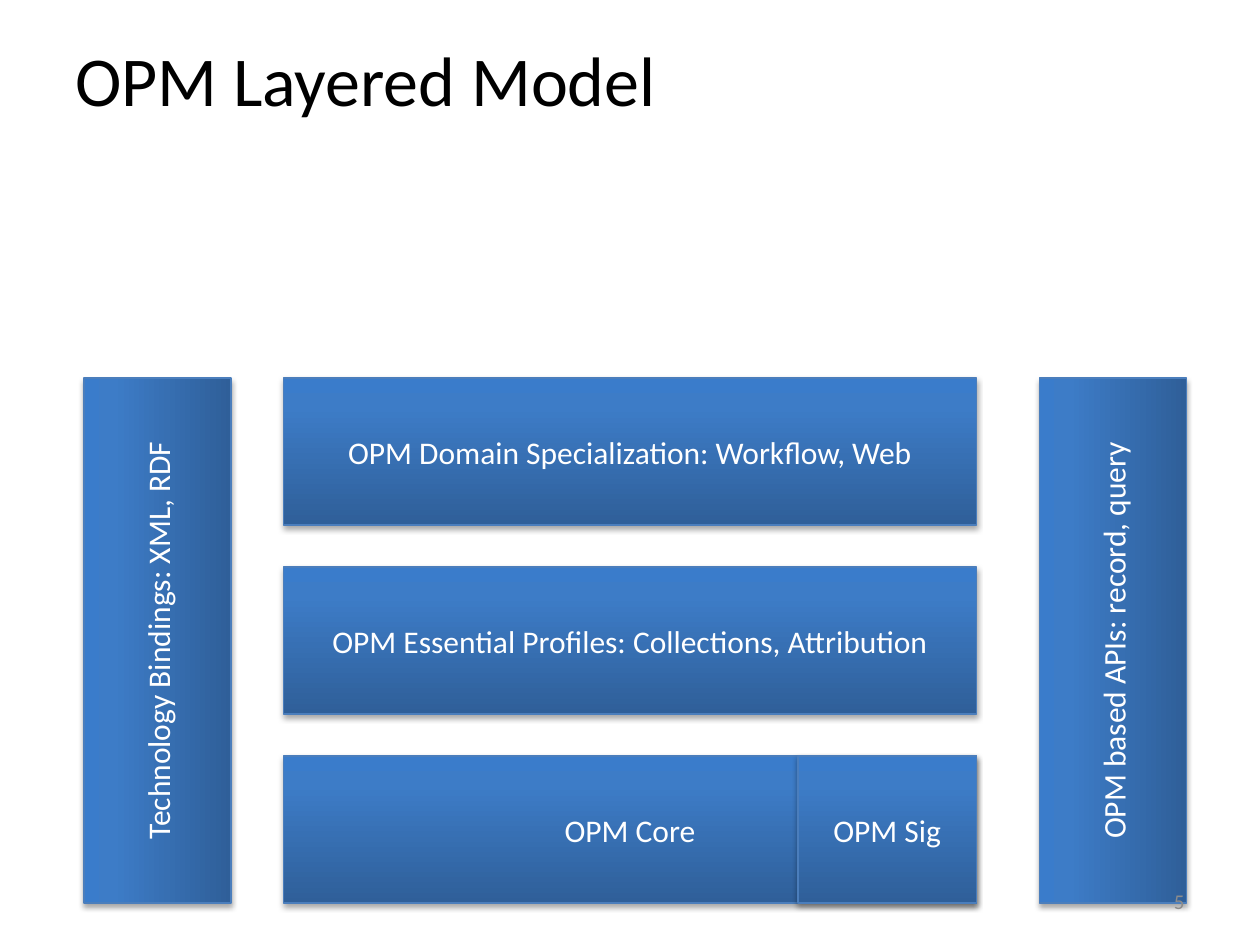
import copy
from typing import NamedTuple

import pptx
import pptx.dml.color
import pptx.enum.shapes
import pptx.enum.text
import pptx.oxml
import pptx.oxml.ns
import pptx.util

Pt = pptx.util.Pt
RGBColor = pptx.dml.color.RGBColor
ALIGN = pptx.enum.text.PP_ALIGN
MIDDLE = pptx.enum.text.MSO_ANCHOR.MIDDLE
RECT = pptx.enum.shapes.MSO_SHAPE.RECTANGLE

FONT = "Calibri"
BLACK = RGBColor(0x00, 0x00, 0x00)
WHITE = RGBColor(0xFF, 0xFF, 0xFF)
GRAY = RGBColor(0x8C, 0x8C, 0x8C)
EDGE = RGBColor(0x4B, 0x7E, 0xBC)
BLUES = (
    (0, RGBColor(0x2F, 0x5F, 0x99)),
    (0.8, RGBColor(0x3D, 0x7C, 0xC7)),
    (1, RGBColor(0x3A, 0x7C, 0xCB)),
)

# Layer grid, in points
LEFT, TOP, WIDE, HIGH, STEP = 162, 216, 396, 84, 108
SIDE = 300  # length of a side bar before it is turned
SIG = 102  # width of the signature box

SHADOW = (
    f'<a:outerShdw {pptx.oxml.ns.nsdecls("a")} blurRad="{Pt(3.15)}" dist="{Pt(1.8)}"'
    ' dir="5400000" rotWithShape="0">'
    '<a:srgbClr val="000000"><a:alpha val="35000"/></a:srgbClr></a:outerShdw>'
)


class Box(NamedTuple):
    text: str
    x: float
    row: int
    width: float = WIDE
    turn: float = 0


class Label(NamedTuple):
    text: str
    x: float
    y: float
    width: float
    height: float
    size: float
    color: RGBColor
    align: ALIGN


BOXES = (
    Box("OPM Core", LEFT, 2),
    Box("OPM Essential Profiles: Collections, Attribution", LEFT, 1),
    Box("OPM Domain Specialization: Workflow, Web", LEFT, 0),
    Box("Technology Bindings: XML, RDF", -60, 1, SIDE, 270),
    Box("OPM Sig", LEFT + WIDE - SIG, 2, SIG),
    Box("OPM based APIs: record, query", 486, 1, SIDE, 270),
)

LABELS = (
    Label("OPM Layered Model", 36, 0, 534, 90, 40, BLACK, ALIGN.LEFT),
    Label("5", 516, 500.5, 168, 28.8, 12, GRAY, ALIGN.RIGHT),
)


def write(shape, text: str, size: float, color: RGBColor, align: ALIGN) -> None:
    frame = shape.text_frame
    frame.word_wrap = True
    frame.vertical_anchor = MIDDLE
    frame.text = text
    line = frame.paragraphs[0]
    line.alignment = align
    font = line.runs[0].font
    font.name, font.size, font.color.rgb = FONT, Pt(size), color


def shade(fill) -> None:
    fill.gradient()
    fill.gradient_angle = 90
    # A new gradient has two stops; add the third
    first = fill._fill._gradFill.gsLst[0]
    first.addnext(copy.deepcopy(first))
    for stop, (place, color) in zip(fill.gradient_stops, BLUES):
        stop.position = place
        stop.color.rgb = color


def draw_box(slide, box: Box) -> None:
    shape = slide.shapes.add_shape(
        RECT, Pt(box.x), Pt(TOP + box.row * STEP), Pt(box.width), Pt(HIGH)
    )
    shape.rotation = box.turn
    shade(shape.fill)
    shape.line.color.rgb = EDGE
    shape.line.width = Pt(0.75)
    shape.shadow.inherit = False
    effects = shape._element.spPr.find(pptx.oxml.ns.qn("a:effectLst"))
    effects.append(pptx.oxml.parse_xml(SHADOW))
    write(shape, box.text, 18, WHITE, ALIGN.CENTER)


def draw_label(slide, label: Label) -> None:
    shape = slide.shapes.add_textbox(
        Pt(label.x), Pt(label.y), Pt(label.width), Pt(label.height)
    )
    write(shape, label.text, label.size, label.color, label.align)


def main() -> None:
    deck = pptx.Presentation()
    deck.slide_width, deck.slide_height = Pt(720), Pt(540)
    slide = deck.slides.add_slide(deck.slide_layouts[6])
    title, number = LABELS

    # Title, layers and side bars, page number
    draw_label(slide, title)
    for box in BOXES:
        draw_box(slide, box)
    draw_label(slide, number)

    deck.save("out.pptx")


if __name__ == "__main__":
    main()
